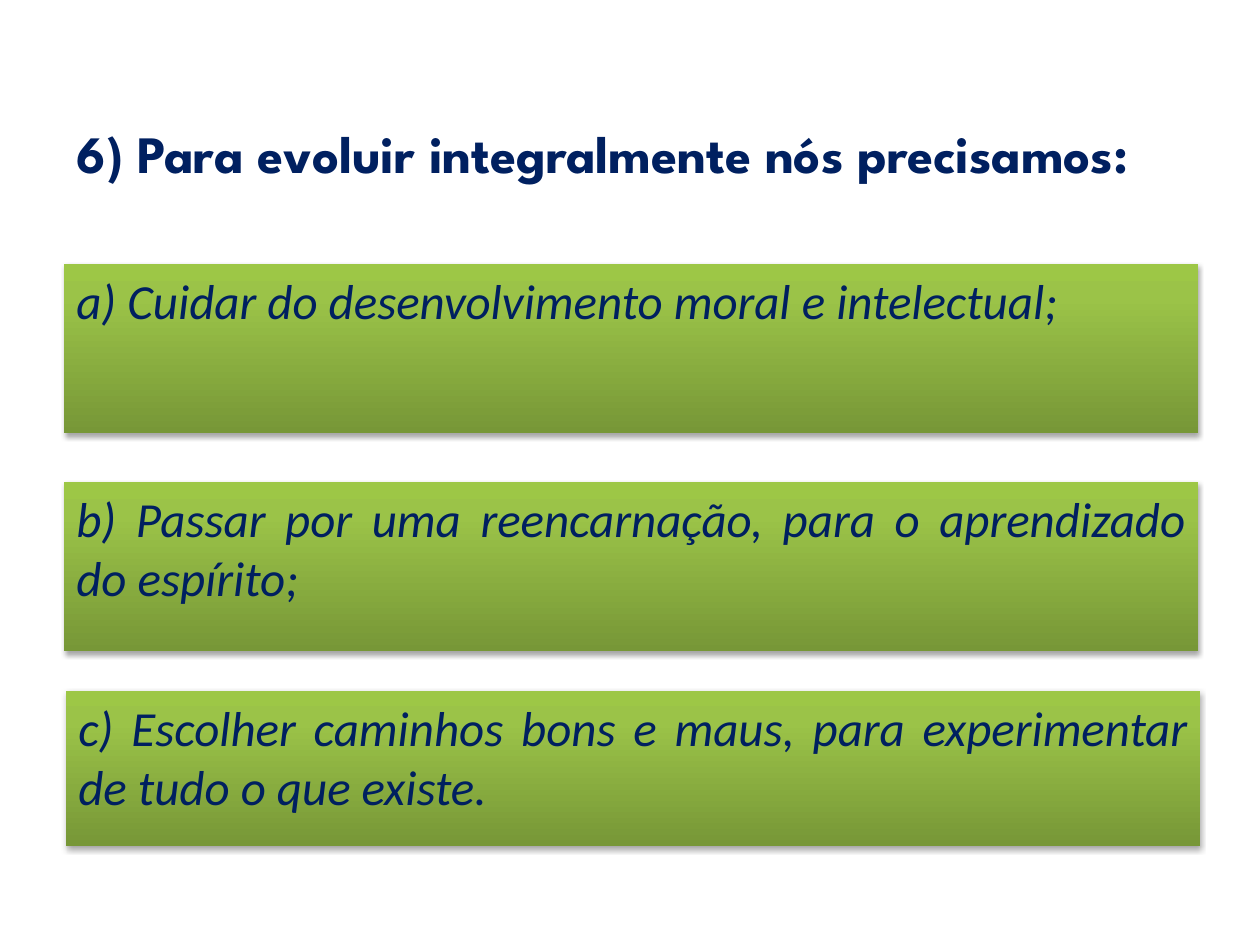
from lxml import etree
from pptx import Presentation
from pptx.dml.color import RGBColor
from pptx.enum.shapes import MSO_SHAPE
from pptx.enum.text import MSO_ANCHOR, PP_ALIGN
from pptx.oxml import parse_xml
from pptx.oxml.ns import nsdecls, qn
from pptx.util import Pt

RECTANGLE = MSO_SHAPE.RECTANGLE
TOP, MIDDLE = MSO_ANCHOR.TOP, MSO_ANCHOR.MIDDLE
LEFT, JUSTIFY = PP_ALIGN.LEFT, PP_ALIGN.JUSTIFY

# Content: question, then answers as (text, left, top, height) in px
QUESTION = "6) Para evoluir integralmente nós precisamos:"
ANSWERS = [
    ("a) Cuidar do desenvolvimento moral e intelectual;", 64, 264, 169),
    ("b) Passar por uma reencarnação, para o aprendizado do espírito;",
     64, 482, 169),
    ("c) Escolher caminhos bons e maus, para experimentar de tudo o que existe.",
     66, 691, 155),
]
COLORS = {"navy": "002060", "dark": "779737", "mid": "9BC348",
          "light": "9DC746", "shadow": "000000"}
GRADIENT = [(0, "dark"), (80, "mid"), (100, "light")]
WIDTH = 1134


def px(value):
    return round(value * 914400 / 126)


def place(shape, left, top, width, height):
    shape.left, shape.top = px(left), px(top)
    shape.width, shape.height = px(width), px(height)


def write(shape, text, font, size, align, anchor, bold=False, italic=False):
    frame = shape.text_frame
    frame.word_wrap = True
    frame.vertical_anchor = anchor
    paragraph = frame.paragraphs[0]
    paragraph.alignment = align
    run = paragraph.add_run()
    run.text = text
    run.font.name, run.font.size = font, Pt(size)
    run.font.bold, run.font.italic = bold, italic
    run.font.color.rgb = RGBColor.from_string(COLORS["navy"])
    return paragraph


def style_box(shape):
    """Green gradient rising from dark to light, no outline, soft shadow."""
    shape.line.fill.background()
    shape.shadow.inherit = False
    stops = "".join(
        f'<a:gs pos="{position * 1000}"><a:srgbClr val="{COLORS[name]}"/></a:gs>'
        for position, name in GRADIENT)
    properties = shape._element.spPr
    properties.find(qn("a:ln")).addprevious(parse_xml(
        f'<a:gradFill {nsdecls("a")} rotWithShape="1"><a:gsLst>{stops}</a:gsLst>'
        '<a:lin ang="16200000" scaled="0"/></a:gradFill>'))
    shadow = etree.SubElement(
        properties.find(qn("a:effectLst")), qn("a:outerShdw"),
        blurRad=str(Pt(3.1)), dist=str(Pt(1.8)), dir="5400000", rotWithShape="0")
    color = etree.SubElement(shadow, qn("a:srgbClr"), val=COLORS["shadow"])
    etree.SubElement(color, qn("a:alpha"), val="35000")


presentation = Presentation()
presentation.slide_width, presentation.slide_height = px(1260), px(945)
slide = presentation.slides.add_slide(presentation.slide_layouts[5])

# Question
title = slide.shapes.title
place(title, 64, 46, WIDTH, 214)
write(title, QUESTION, "League Spartan", 30, LEFT, MIDDLE, bold=True)

# Answer boxes
for text, left, top, height in ANSWERS:
    box = slide.shapes.add_shape(RECTANGLE, 0, 0, 0, 0)
    place(box, left, top, WIDTH, height)
    style_box(box)
    paragraph = write(box, text, "Calibri", 28, JUSTIFY, TOP, italic=True)
    paragraph.space_before = Pt(5.6)

presentation.save("out.pptx")
